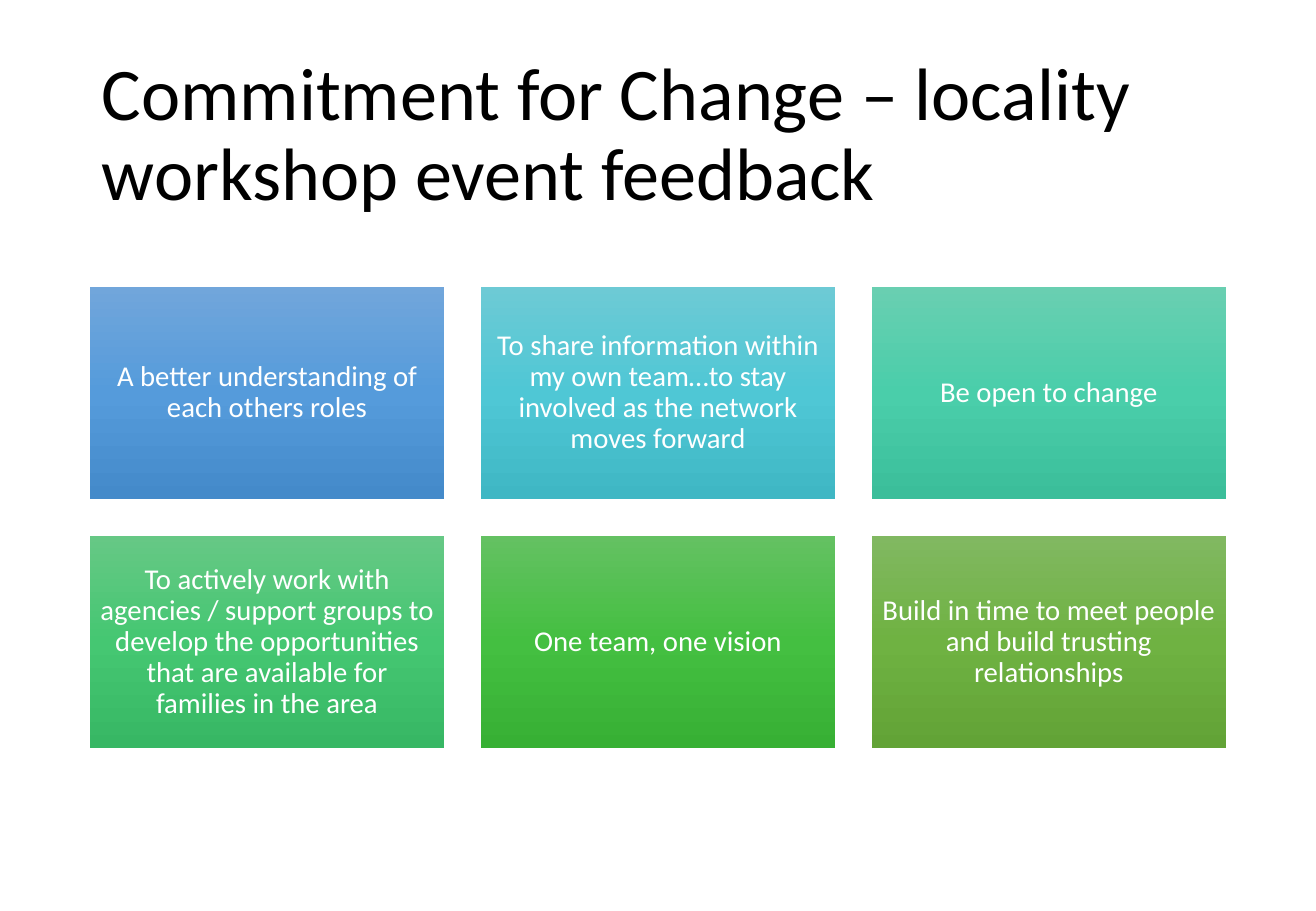
from copy import deepcopy
from dataclasses import dataclass

from pptx import Presentation
from pptx.dml.color import RGBColor
from pptx.enum.shapes import MSO_SHAPE
from pptx.enum.text import MSO_ANCHOR, PP_ALIGN
from pptx.oxml.ns import qn
from pptx.util import Inches, Pt


@dataclass(frozen=True)
class Theme:
    font: str = "Calibri"
    title_size: int = 44
    tile_size: int = 17
    title_color: str = "000000"
    tile_color: str = "FFFFFF"
    blue: tuple = ("71A6DB", "559BDB", "448ACA")
    cyan: tuple = ("6DCAD5", "4FC7D5", "3FB7C4")
    teal: tuple = ("69CFB1", "4ACEAA", "3BBE9A")
    mint: tuple = ("66C885", "45C772", "37B764")
    green: tuple = ("64C162", "44BF41", "37B034")
    olive: tuple = ("81B861", "6FB242", "62A336")


THEME = Theme()

TITLE = "Commitment for Change – locality workshop event feedback"
COMMITMENTS = [
    ("A better understanding of each others roles", THEME.blue),
    ("To share information within my own team…to stay involved as the network moves forward", THEME.cyan),
    ("Be open to change", THEME.teal),
    ("To actively work with agencies / support groups to develop the opportunities "
     "that are available for families in the area", THEME.mint),
    ("One team, one vision", THEME.green),
    ("Build in time to meet people and build trusting relationships", THEME.olive),
]


def write_text(shape, text, *, size, color, align=PP_ALIGN.LEFT, inset=None):
    frame = shape.text_frame
    frame.word_wrap = True
    frame.vertical_anchor = MSO_ANCHOR.MIDDLE
    if inset is not None:
        frame.margin_left = frame.margin_right = Inches(inset)
        frame.margin_top = frame.margin_bottom = Inches(inset)
    paragraph = frame.paragraphs[0]
    paragraph.alignment = align
    paragraph.line_spacing = 0.9
    run = paragraph.add_run()
    run.text = text
    run.font.name = THEME.font
    run.font.size = Pt(size)
    run.font.color.rgb = RGBColor.from_string(color)


def fill_gradient(shape, colors):
    """Fill from top to bottom with evenly spaced colours."""
    shape.fill.gradient()
    shape.fill.gradient_angle = 270
    stop_list = shape.element.spPr.find(".//" + qn("a:gsLst"))
    while len(stop_list) < len(colors):
        stop_list.append(deepcopy(stop_list[-1]))
    for index, (stop, color) in enumerate(zip(shape.fill.gradient_stops, colors)):
        stop.position = index / (len(colors) - 1)
        stop.color.rgb = RGBColor.from_string(color)


def add_title(slide, left, top, width, height):
    title = slide.shapes.add_textbox(Inches(left), Inches(top), Inches(width), Inches(height))
    write_text(title, TITLE, size=THEME.title_size, color=THEME.title_color)


def add_tile(slide, left, top, width, height, text, colors):
    tile = slide.shapes.add_shape(
        MSO_SHAPE.RECTANGLE, Inches(left), Inches(top), Inches(width), Inches(height))
    tile.shadow.inherit = False
    tile.line.fill.background()
    fill_gradient(tile, colors)
    write_text(tile, text, size=THEME.tile_size, color=THEME.tile_color,
               align=PP_ALIGN.CENTER, inset=0.07)


def add_commitment_grid(slide, left, top, width, height, columns=3, gap=0.3):
    rows = len(COMMITMENTS) // columns
    tile_width = (width - gap * (columns - 1)) / columns
    tile_height = (height - gap * (rows - 1)) / rows
    for index, (text, colors) in enumerate(COMMITMENTS):
        row, column = divmod(index, columns)
        add_tile(slide, left + column * (tile_width + gap), top + row * (tile_height + gap),
                 tile_width, tile_height, text, colors)


def main():
    presentation = Presentation()
    presentation.slide_width = Inches(10.83)
    presentation.slide_height = Inches(7.5)
    slide = presentation.slides.add_slide(presentation.slide_layouts[6])
    add_title(slide, 0.74, 0.4, 9.34, 1.45)
    add_commitment_grid(slide, 0.74, 2.36, 9.35, 3.8)
    presentation.save("out.pptx")


if __name__ == "__main__":
    main()
